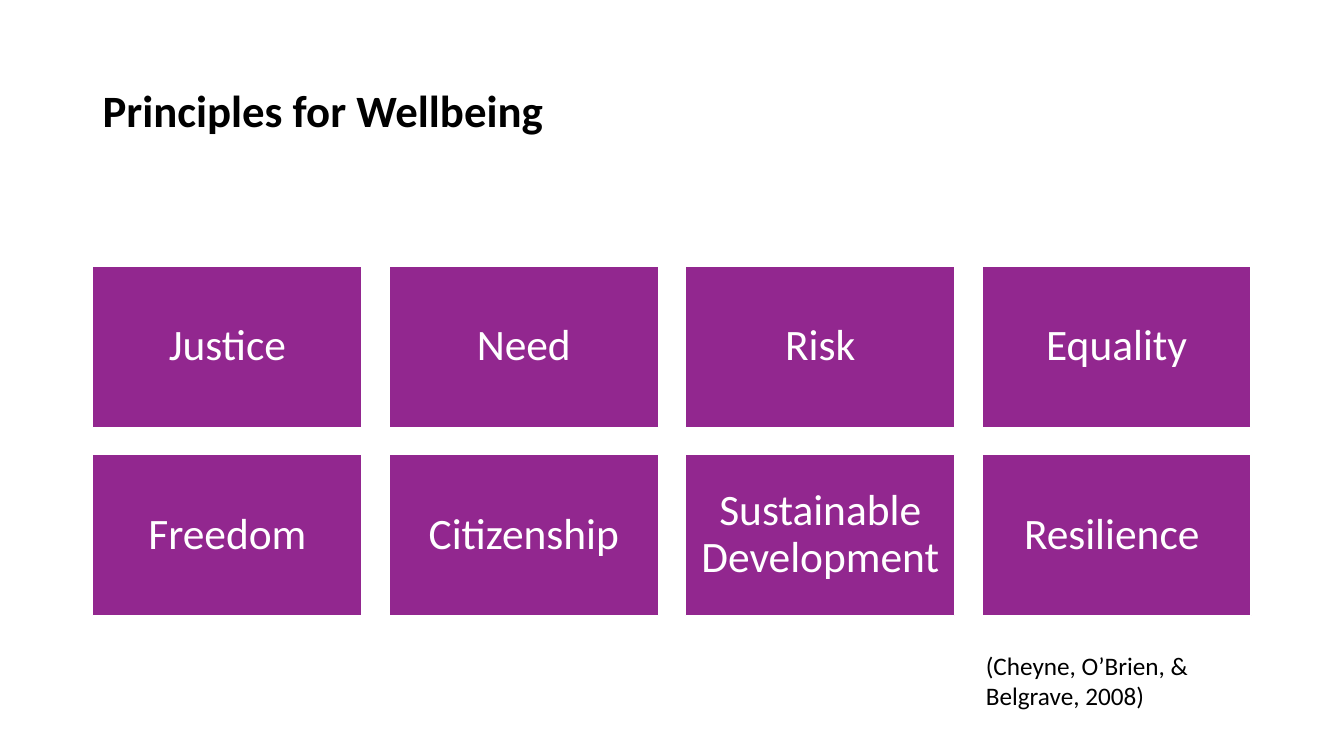
from dataclasses import dataclass

from pptx import Presentation
from pptx.dml.color import RGBColor
from pptx.enum.shapes import MSO_SHAPE
from pptx.enum.text import MSO_ANCHOR, PP_ALIGN
from pptx.slide import Slide
from pptx.text.text import TextFrame
from pptx.util import Inches, Pt

RECTANGLE = MSO_SHAPE.RECTANGLE
TOP, MIDDLE = MSO_ANCHOR.TOP, MSO_ANCHOR.MIDDLE
CENTER = PP_ALIGN.CENTER

PURPLE = RGBColor(0x92, 0x27, 0x8F)
WHITE = RGBColor(0xFF, 0xFF, 0xFF)
BLACK = RGBColor(0x00, 0x00, 0x00)
FONT = "Calibri"

COLUMNS = 4
GRID_LEFT, GRID_TOP = 0.92, 2.64
TILE_WIDTH, TILE_HEIGHT = 2.67, 1.6
GAP = 0.27
TILE_INSET = 0.13

PRINCIPLES = [
    "Justice", "Need", "Risk", "Equality",
    "Freedom", "Citizenship", "Sustainable Development", "Resilience ",
]


@dataclass(frozen=True)
class Label:
    text: str
    left: float
    top: float
    width: float
    height: float
    size: int
    bold: bool = False
    anchor: MSO_ANCHOR = TOP
    line_spacing: float = 1.0


TITLE = Label("Principles for Wellbeing", 0.92, 0.4, 11.5, 1.45, 32, True, MIDDLE, 0.9)
CITATION = Label("(Cheyne, O’Brien, & Belgrave, 2008)", 9.68, 6.4, 2.84, 0.71, 18)


def write(tf: TextFrame, text: str, size: int, color: RGBColor,
          bold: bool, anchor: MSO_ANCHOR, line_spacing: float) -> None:
    tf.text = text
    tf.word_wrap = True
    tf.vertical_anchor = anchor
    p = tf.paragraphs[0]
    p.line_spacing = line_spacing
    font = p.runs[0].font
    font.name = FONT
    font.size = Pt(size)
    font.bold = bold
    font.color.rgb = color


def add_label(s: Slide, label: Label) -> None:
    sp = s.shapes.add_textbox(Inches(label.left), Inches(label.top),
                              Inches(label.width), Inches(label.height))
    write(sp.text_frame, label.text, label.size, BLACK,
          label.bold, label.anchor, label.line_spacing)


def add_tile(s: Slide, index: int, text: str) -> None:
    row, column = divmod(index, COLUMNS)
    sp = s.shapes.add_shape(
        RECTANGLE,
        Inches(GRID_LEFT + column * (TILE_WIDTH + GAP)),
        Inches(GRID_TOP + row * (TILE_HEIGHT + GAP)),
        Inches(TILE_WIDTH), Inches(TILE_HEIGHT))
    sp.shadow.inherit = False
    sp.fill.solid()
    sp.fill.fore_color.rgb = PURPLE
    sp.line.color.rgb = WHITE
    sp.line.width = Pt(1)
    tf = sp.text_frame
    tf.margin_left = tf.margin_right = Inches(TILE_INSET)
    tf.margin_top = tf.margin_bottom = Inches(TILE_INSET)
    write(tf, text, 31, WHITE, False, MIDDLE, 0.9)
    tf.paragraphs[0].alignment = CENTER


def main() -> None:
    prs = Presentation()
    prs.slide_width, prs.slide_height = Inches(13.33), Inches(7.5)
    s = prs.slides.add_slide(prs.slide_layouts[6])
    add_label(s, TITLE)
    for index, text in enumerate(PRINCIPLES):
        add_tile(s, index, text)
    add_label(s, CITATION)
    prs.save("out.pptx")


if __name__ == "__main__":
    main()
